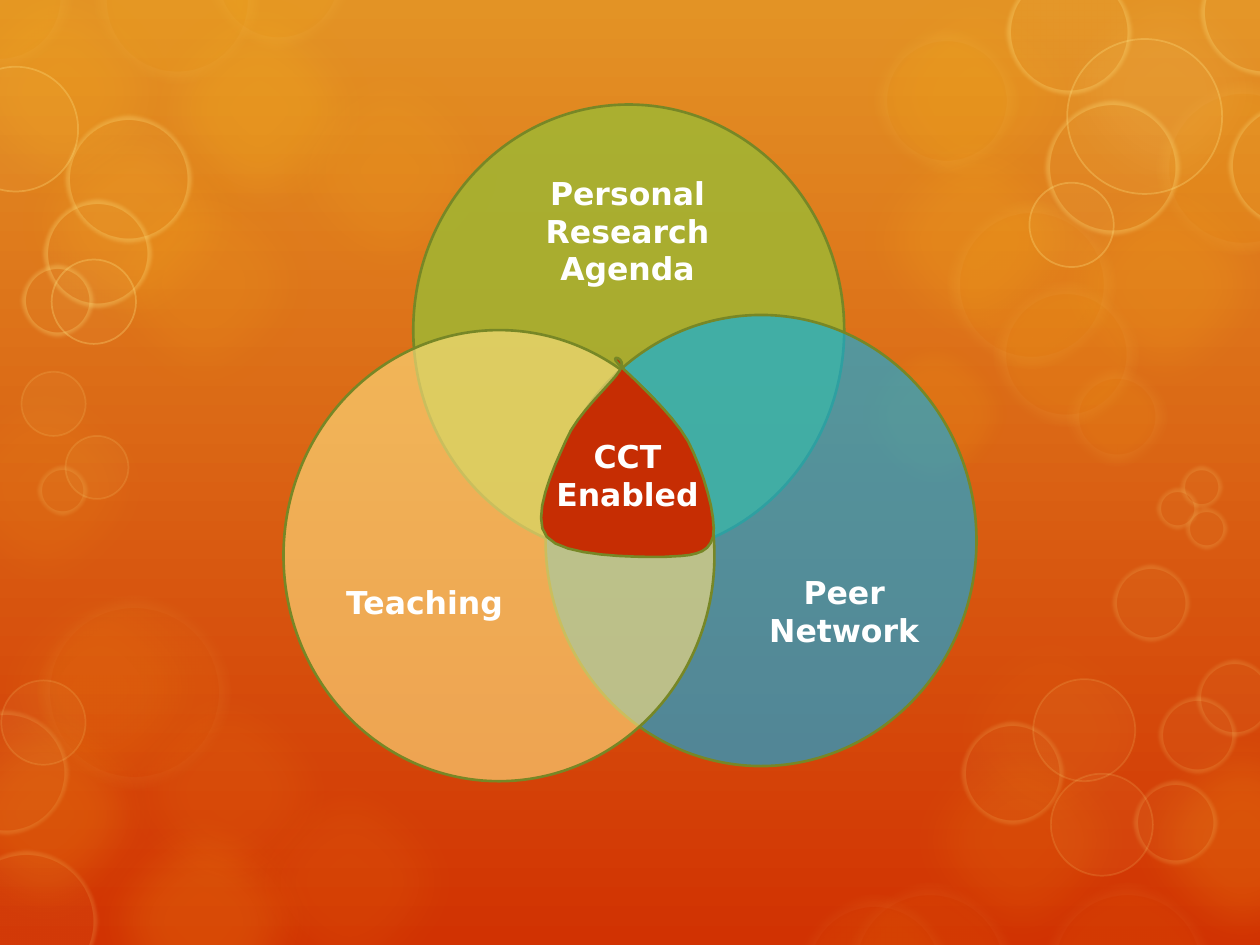
from lxml.etree import SubElement
from pptx import Presentation
from pptx.dml.color import RGBColor as RGB
from pptx.enum.shapes import MSO_SHAPE as Kind
from pptx.enum.text import MSO_AUTO_SIZE as Fit, PP_ALIGN as Align
from pptx.oxml.ns import qn
from pptx.util import Inches, Pt

HUE = {
    "top": "E39325", "base": "D13202", "gold": "FDC61B", "cream": "FFE281",
    "pale": "FEEBAE", "olive": "778726", "green": "A1B633", "blue": "00B0F0",
    "red": "C62D03", "white": "FFFFFF",
}

deck = Presentation()
deck.slide_width, deck.slide_height = Inches(10), Inches(7.5)
cell = deck.slide_width // 100  # the slide is a grid of 100 columns and 75 rows
slide = deck.slides.add_slide(deck.slide_layouts[6])
shapes = slide.shapes


def add_oval(x, y, wide, high):
    return shapes.add_shape(
        Kind.OVAL, *(int(n * cell) for n in (x, y, wide, high)))


def paint(shape, fill, share=100, edge=None, width=0, clear=100, blur=0):
    """Fill and edge, each with its opacity in percent; blur in points."""
    shape.shadow.inherit = False
    shape.fill.solid()
    shape.fill.fore_color.rgb = RGB.from_string(HUE[fill])
    if edge:
        shape.line.color.rgb = RGB.from_string(HUE[edge])
        shape.line.width = Pt(width)
    else:
        shape.line.fill.background()
    props = shape._element.spPr
    for tone, part in zip(props.iter(qn("a:srgbClr")), (share, clear)):
        if part < 100:
            SubElement(tone, qn("a:alpha"), val=str(part * 1000))
    if blur:
        glow = props.find(qn("a:effectLst"))
        SubElement(glow, qn("a:softEdge"), rad=str(Pt(blur)))


# Background gradient
back = slide.background.fill
back.gradient()
back.gradient_angle = 270
for stop, name in zip(back.gradient_stops, ("top", "base")):
    stop.color.rgb = RGB.from_string(HUE[name])

# Bubbles: style, then left, top and diameter in cells
big = 20.9
bubbles = [
    (dict(fill="gold", share=8, blur=25),
     [(-2.5, 44.2, big), (7.7, 52.4, big), (17.3, 59.6, big), (-6.9, 28.2, big)]),
    (dict(fill="gold", share=10, blur=25),
     [(5.7, 12, big), (20.5, 3.1, big), (66.9, -2.9, big), (70.6, 56.2, big)]),
    (dict(fill="gold", share=15, blur=25),
     [(0, 7.2, big), (82, 12, big), (66.9, 8.6, big), (-5.6, -3.2, big)]),
    (dict(fill="gold", share=16, blur=25),
     [(5.7, 62.7, big), (88.1, 56.2, big), (-6.9, 54.1, big)]),
    (dict(fill="gold", share=20, blur=25), [(10.1, -1.8, big)]),
    (dict(fill="gold", share=5, blur=25), [(72.9, 47.7, big)]),
    (dict(fill="cream", share=10, blur=25), [(82, -3.2, big)]),
    (dict(fill="gold", share=10, blur=12), [(67.5, 26.2, 13.3)]),
    (dict(fill="gold", share=10, edge="pale", width=14, clear=6, blur=9),
     [(91.8, 6.5, 13.7), (69.4, 2.3, 11.4), (75.2, 15.9, 13.3),
      (78.9, 22.4, 11.4), (84.7, 29.1, 7.9), (7.5, -6.5, 13.1),
      (16.4, -7.5, 11.4), (-5.7, -5.8, 11.4)]),
    (dict(fill="gold", share=6, edge="pale", width=14, clear=4, blur=9),
     [(3, 47.3, 15.3), (63.2, 71, 12.4), (67, 70.1, 13.6), (82.8, 70.1, 13.4)]),
    (dict(fill="cream", share=5, edge="cream", width=1, clear=15),
     [(0.1, 54, 6.7), (83.4, 61.4, 8.1), (82, 53.9, 8.1),
      (1.7, 29.5, 5.1), (5.2, 34.6, 5)]),
    (dict(fill="cream", share=5, edge="cream", width=5, clear=15, blur=2.5),
     [(-3.5, 67.5, 11.2), (-4.4, 56.4, 9.8), (76.3, 57.3, 8.1),
      (90, 62, 6.6), (88.3, 44.8, 6.1), (92, 55.3, 6.1), (95, 52.4, 6),
      (93.7, 37, 3.3), (91.8, 38.7, 3.3), (94.1, 40.3, 3.3), (3, 37, 3.9)]),
    (dict(fill="cream", share=5, edge="cream", width=1, clear=30),
     [(-3.7, 5.3, 9.9), (4.1, 20.6, 6.7), (84.7, 3.1, 12.3), (81.7, 14.5, 6.7)]),
    (dict(fill="cream", share=5, edge="cream", width=5, clear=30, blur=2.5),
     [(5.2, 9.2, 10), (3.5, 15.9, 8.5), (1.7, 21, 5.7), (79.9, -2.4, 9.9),
      (95.3, -4, 10), (97.5, 8.2, 9.9), (83, 8, 10.6)]),
]
for style, rings in bubbles:
    for x, y, size in rings:
        paint(add_oval(x, y, size, size), **style)

# Three overlapping circles
for x, y, fill, share in [(32.8, 8.3, "green", 86), (43.3, 25, "blue", 61),
                          (22.5, 26.2, "cream", 61)]:
    paint(add_oval(x, y, 34.2, 35.8), fill, share, "olive", 1.5)

# Centre: Bezier curves, each with two handles and an end
curves = [
    ((48.5, 30.5), (45.8, 32.8), (44.9, 35)),
    ((43.9, 37.2), (42.1, 41.1), (43.4, 42.6)),
    ((44.7, 44.2), (50.4, 44.2), (52.6, 44.2)),
    ((54.8, 44.1), (56.2, 44.1), (56.6, 42.6)),
    ((56.9, 41), (55.8, 37.3), (54.6, 35)),
    ((53.3, 32.7), (50, 29.8), (49.1, 28.9)),
    ((48.2, 28), (49.9, 28.4), (49.2, 29.4)),
]
core = [(49.2, 29.4)]
for one, two, end in curves:
    start = core[-1]
    for t in (n / 8 for n in range(1, 9)):
        u = 1 - t
        core.append(tuple(
            u**3 * a + 3 * u * u * t * b + 3 * u * t * t * c + t**3 * d
            for a, b, c, d in zip(start, one, two, end)))
spots = [(x * 100, y * 100) for x, y in core]
pen = shapes.build_freeform(*spots[0], scale=cell / 100)
pen.add_line_segments(spots[1:], close=True)
paint(pen.convert_to_shape(), "red", edge="olive", width=1.5)

# Labels
face = {"name": "DejaVu Sans", "size": Pt(18), "bold": True}
labels = [
    ("Personal Research Agenda", 41.9, 13.3, 10.1),
    ("Peer Network", 59.1, 45, 7.1),
    ("Teaching", 25.8, 45.8, 4),
    ("CCT Enabled", 41.9, 34.2, 7.1),
]
for text, x, y, high in labels:
    box = shapes.add_textbox(*(int(n * cell) for n in (x, y, 15.8, high)))
    frame = box.text_frame
    frame.word_wrap = True
    frame.auto_size = Fit.SHAPE_TO_FIT_TEXT
    line = frame.paragraphs[0]
    line.alignment = Align.CENTER
    run = line.add_run()
    run.text = text
    for key, value in face.items():
        setattr(run.font, key, value)
    run.font.color.rgb = RGB.from_string(HUE["white"])

deck.save("out.pptx")
